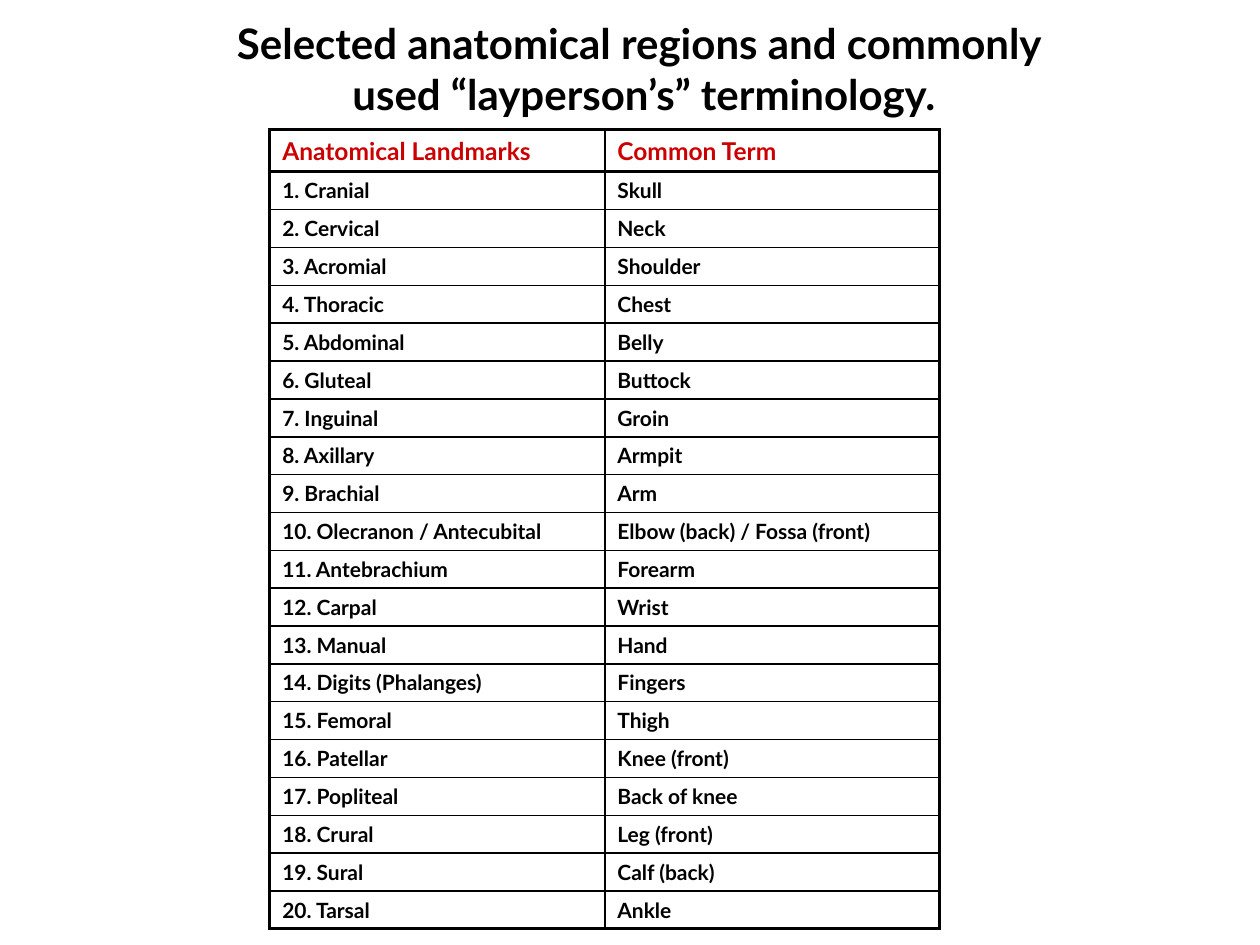
from lxml.etree import SubElement
from pptx import Presentation
from pptx.dml.color import RGBColor
from pptx.enum.text import MSO_ANCHOR, MSO_AUTO_SIZE, PP_ALIGN
from pptx.oxml.ns import qn
from pptx.util import Inches, Pt

FONT = "Lato"
BLACK = RGBColor(0x00, 0x00, 0x00)
RED = RGBColor(0xCC, 0x00, 0x00)
THIN, THICK = Pt(1), Pt(2)

TITLE_LINES = [
    "Selected anatomical regions and commonly ",
    "used “layperson’s” terminology.",
]
HEADINGS = ("Anatomical Landmarks", "Common Term")
REGIONS = [
    ("Cranial", "Skull"),
    ("Cervical", "Neck"),
    ("Acromial", "Shoulder"),
    ("Thoracic", "Chest"),
    ("Abdominal", "Belly"),
    ("Gluteal", "Buttock"),
    ("Inguinal", "Groin"),
    ("Axillary", "Armpit"),
    ("Brachial", "Arm"),
    ("Olecranon / Antecubital", "Elbow (back) / Fossa (front)"),
    ("Antebrachium", "Forearm"),
    ("Carpal", "Wrist"),
    ("Manual", "Hand"),
    ("Digits (Phalanges)", "Fingers"),
    ("Femoral", "Thigh"),
    ("Patellar", "Knee (front)"),
    ("Popliteal", "Back of knee"),
    ("Crural", "Leg (front)"),
    ("Sural", "Calf (back)"),
    ("Tarsal", "Ankle"),
]


def format_font(para, size, color):
    font = para.font
    font.name, font.size, font.bold = FONT, Pt(size), True
    font.color.rgb = color


def fill_title(title):
    title.left, title.top = Inches(1.49), Inches(0.09)
    title.width, title.height = Inches(7.24), Inches(0.9)
    frame = title.text_frame
    frame.text = "\n".join(TITLE_LINES)
    frame.word_wrap = True
    frame.auto_size = MSO_AUTO_SIZE.SHAPE_TO_FIT_TEXT
    frame.vertical_anchor = MSO_ANCHOR.MIDDLE
    for para in frame.paragraphs:
        para.alignment = PP_ALIGN.CENTER
        para.space_before = Pt(0)
        format_font(para, 24, BLACK)


def set_borders(cell, widths):
    """Draw black borders; widths are left, right, top, bottom."""
    properties = cell._tc.get_or_add_tcPr()
    for side, width in zip("LRTB", widths):
        line = SubElement(properties, qn(f"a:ln{side}"), w=str(width))
        fill = SubElement(line, qn("a:solidFill"))
        SubElement(fill, qn("a:srgbClr"), val=str(BLACK))


def add_region_table(slide):
    rows = [HEADINGS] + [
        (f"{number}. {region}", term)
        for number, (region, term) in enumerate(REGIONS, start=1)
    ]
    last = len(rows) - 1
    frame = slide.shapes.add_table(
        len(rows), 2, Inches(2.14), Inches(1.03), Inches(5.32), Inches(6.33)
    )
    table = frame.table
    table.first_row = table.horz_banding = False
    for column in table.columns:
        column.width = Inches(2.66)

    for row_index, texts in enumerate(rows):
        is_header = row_index == 0
        table.rows[row_index].height = Inches(0.33 if is_header else 0.3)
        for column_index, text in enumerate(texts):
            cell = table.cell(row_index, column_index)
            cell.text = text
            size, color = (14, RED) if is_header else (12, BLACK)
            format_font(cell.text_frame.paragraphs[0], size, color)
            thick_sides = (
                column_index == 0,
                column_index == 1,
                row_index <= 1,
                row_index in (0, last),
            )
            set_borders(cell, [THICK if thick else THIN for thick in thick_sides])
            cell.fill.background()


def main():
    deck = Presentation()
    deck.slide_width, deck.slide_height = Inches(10), Inches(7.5)
    slide = deck.slides.add_slide(deck.slide_layouts.get_by_name("Title Only"))
    fill_title(slide.shapes.title)
    add_region_table(slide)
    deck.save("out.pptx")


if __name__ == "__main__":
    main()
